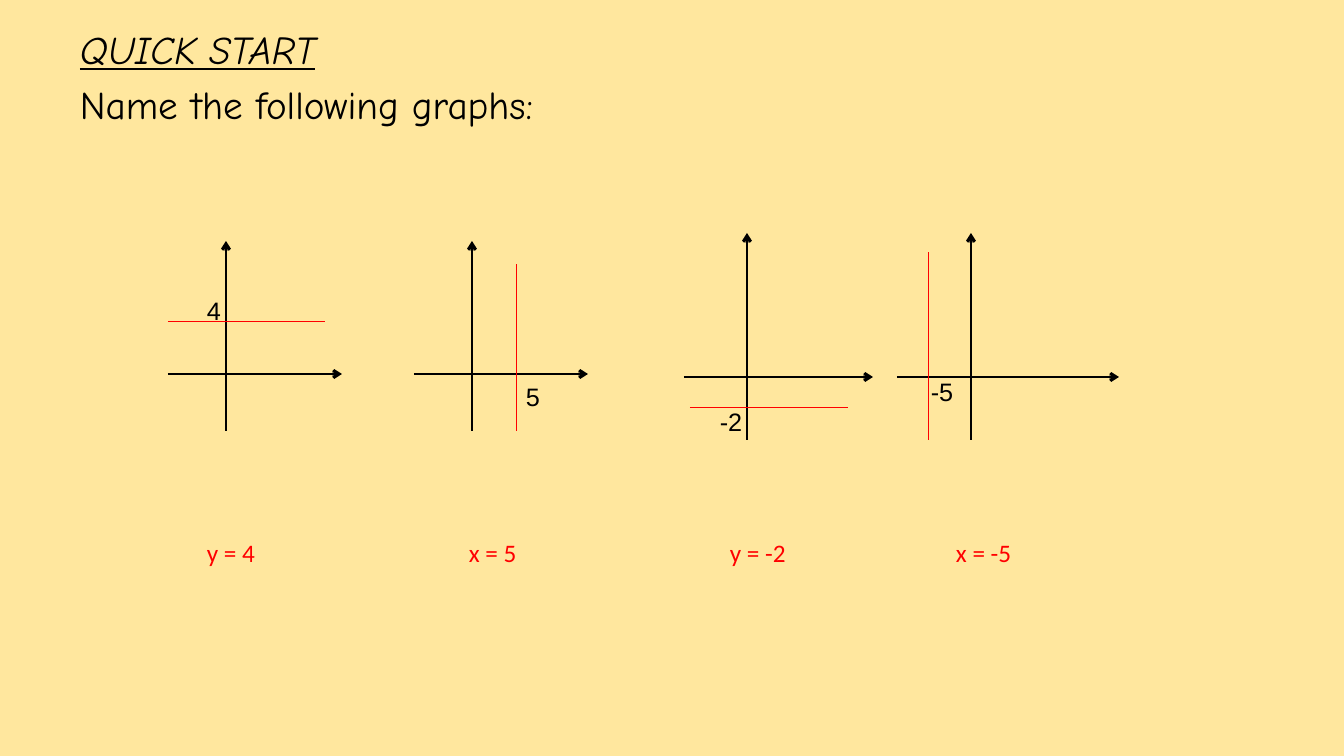
from lxml import etree
from pptx import Presentation
from pptx.dml.color import RGBColor
from pptx.enum.shapes import MSO_CONNECTOR
from pptx.enum.text import MSO_AUTO_SIZE
from pptx.oxml.ns import qn
from pptx.util import Emu, Pt

STRAIGHT = MSO_CONNECTOR.STRAIGHT
GROW = MSO_AUTO_SIZE.SHAPE_TO_FIT_TEXT
PX = 914400 / 100.8

BLACK, RED, CREAM = "000000", "FF0000", "FFE79E"
NUMBER = {"name": "Arial", "size": Pt(18)}
ANSWER = {"name": "Calibri", "size": Pt(18)}
BODY = {"name": "Comic Neue", "size": Pt(28)}
HEADING = {**BODY, "italic": True, "underline": True}

ANSWER_TOP = 532
GRAPHS = [
    {"box": (168, 241, 174, 190), "origin": (58, 133), "line": (0, 80, 157, 80),
     "number": ("4", 29, 49, 34), "answer": ("y = 4", 29)},
    {"box": (414, 241, 174, 190), "origin": (58, 133), "line": (102, 190, 102, 23),
     "number": ("5", 102, 135, 34), "answer": ("x = 5", 45)},
    {"box": (684, 233, 189, 207), "origin": (63, 144), "line": (6, 174, 164, 174),
     "number": ("-2", 26, 168, 43), "answer": ("y = -2", 36)},
    {"box": (897, 233, 222, 207), "origin": (74, 144), "line": (0 + 31, 207, 31, 19),
     "number": ("-5", 24, 138, 43), "answer": ("x = -5", 49)},
]


def px(n):
    """Turn pixels into EMU."""
    return Emu(round(n * PX))


def rgb(value):
    """Turn a hex string into a colour."""
    return RGBColor.from_string(value)


def add_line(shapes, ends, color, width, arrow=False):
    """Draw a straight line, with an arrowhead at its end if asked."""
    line = shapes.add_connector(STRAIGHT, *map(px, ends))
    line.line.color.rgb = rgb(color)
    line.line.width = Pt(width)
    if arrow:
        ln = line.line._get_or_add_ln()
        etree.SubElement(ln, qn("a:tailEnd"), type="arrow")
    etree.SubElement(line._element.spPr, qn("a:effectLst"))


def add_text(slide, box, lines, color, wrap=True):
    """Add a text box with one paragraph per (text, format) pair."""
    tf = slide.shapes.add_textbox(*map(px, box)).text_frame
    tf.word_wrap = wrap
    tf.auto_size = GROW
    for i, (text, fmt) in enumerate(lines):
        p = tf.add_paragraph() if i else tf.paragraphs[0]
        if i:
            p.space_before = Pt(5.6)
        r = p.add_run()
        r.text = text
        r.font.color.rgb = rgb(color)
        for name, value in fmt.items():
            setattr(r.font, name, value)


def add_graph(slide, box, origin, line, number, answer):
    """Draw a pair of axes with its line, number and answer."""
    x, y, w, h = box
    ox, oy = x + origin[0], y + origin[1]
    axes = slide.shapes.add_group_shape().shapes
    add_line(axes, (ox, y + h, ox, y), BLACK, 2, arrow=True)
    add_line(axes, (x, oy, x + w, oy), BLACK, 2, arrow=True)
    x1, y1, x2, y2 = line
    add_line(slide.shapes, (x + x1, y + y1, x + x2, y + y2), RED, 0.5)
    text, dx, dy, width = number
    add_text(slide, (x + dx, y + dy, width, 40), [(text, NUMBER)], BLACK, wrap=False)
    text, dx = answer
    add_text(slide, (x + dx, ANSWER_TOP, 129, 40), [(text, ANSWER)], RED)


def add_title(slide, box):
    """Add the heading and the task."""
    lines = [("QUICK START", HEADING), ("Name the following graphs:", BODY)]
    add_text(slide, box, lines, BLACK)


def main():
    """Build and save the slide."""
    prs = Presentation()
    prs.slide_width, prs.slide_height = px(1344), px(756)
    slide = prs.slides.add_slide(prs.slide_layouts[6])
    fill = slide.background.fill
    fill.solid()
    fill.fore_color.rgb = rgb(CREAM)
    for graph in GRAPHS:
        add_graph(slide, **graph)
    add_title(slide, (70, 20, 672, 115))
    prs.save("out.pptx")


if __name__ == "__main__":
    main()
